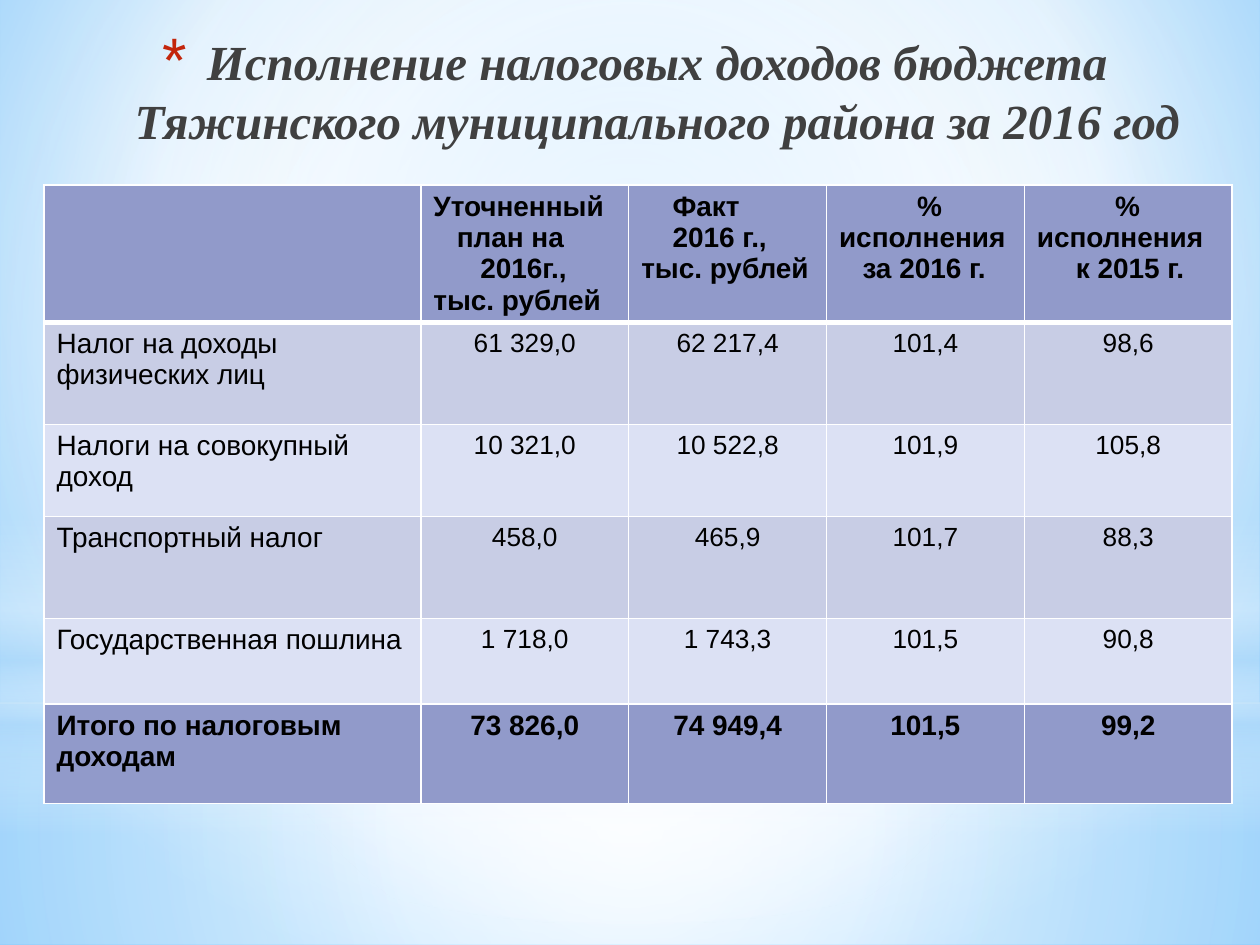
"""Build a slide with a table of district tax revenue for 2016."""
from lxml import etree
from pptx import Presentation, util as u
from pptx.dml.color import RGBColor
from pptx.enum import shapes, text
from pptx.oxml.ns import qn

WIDTH, HEIGHT = 10, 7.5
TITLE = "Исполнение налоговых доходов бюджета Тяжинского муниципального района за 2016 год"
HEADINGS = [
    [],
    [("Уточненный", 0), ("план на", 3), ("2016г., тыс. рублей", 6)],
    [("Факт", 4), ("2016 г., тыс. рублей", 4)],
    [("% исполнения", 10), ("за 2016 г.", 3)],
    [("% исполнения", 10), ("к 2015 г.", 5)],
]
TAXES = [
    ("Налог на доходы физических лиц", "61 329,0", "62 217,4", "101,4", "98,6"),
    ("Налоги на совокупный доход", "10 321,0", "10 522,8", "101,9", "105,8"),
    ("Транспортный налог", "458,0", "465,9", "101,7", "88,3"),
    ("Государственная пошлина", "1 718,0", "1 743,3", "101,5", "90,8"),
    ("Итого по налоговым доходам", "73 826,0", "74 949,4", "101,5", "99,2"),
]
COLUMNS = [2.99, 1.65, 1.57, 1.57, 1.65]
ROWS = [0.87, 0.81, 0.73, 0.81, 0.68, 0.79]
ACCENT, BANDS = "919ACA", ("C8CDE5", "DCE1F4")
INDENT_STEP = 0.062
CENTRE = (50, 50, 50, 50)
SKY = [(0, "9ED5FF", 100), (60, "FFFFFF", 100), (100, "5BB9FF", 100)]
BACKDROP = [
    ("RECTANGLE", 5.58, 1.92, CENTRE,
     [(0, "FFFFFF", 91), (37, "FFFFFF", 76), (100, "B4DCFA", 79)]),
    ("RECTANGLE", 0, 5.58, CENTRE,
     [(0, "FFFFFF", 89), (48, "FFFFFF", 62), (100, "B4DCFA", 79)]),
    ("RECTANGLE", 4.12, 2.5, None,
     [(0, "FFFFFF", 0), (29, "FFFFFF", 30), (45, "B4DCFA", 40),
      (55, "FFFFFF", 26), (65, "B4DCFA", 60), (100, "FFFFFF", 0)]),
    ("OVAL", 1.75, 5.58, CENTRE, [(0, "FFFFFF", 100), (56, "FFFFFF", 0)]),
]


def rgb(value):
    return RGBColor.from_string(value)


def child(parent, tag, **attributes):
    values = {name: str(value) for name, value in attributes.items()}
    return etree.SubElement(parent, qn(f"a:{tag}"), values)


def set_gradient(fill, properties, stops, focus):
    fill.solid()
    solid = properties.find(qn("a:solidFill"))
    gradient = etree.Element(qn("a:gradFill"), rotWithShape="1")
    stop_list = child(gradient, "gsLst")
    for position, colour, opacity in stops:
        stop = child(stop_list, "gs", pos=position * 1000)
        child(child(stop, "srgbClr", val=colour), "alpha", val=opacity * 1000)
    if focus:
        sides = {side: share * 1000 for side, share in zip("ltrb", focus)}
        child(child(gradient, "path", path="circle"), "fillToRect", **sides)
    else:
        child(gradient, "lin", ang=90 * 60000, scaled=0)
    properties.replace(solid, gradient)


def add_backdrop(slide):
    background = slide.background.fill
    set_gradient(background, slide.element.find(".//" + qn("p:bgPr")), SKY, (20, 10, 20, 60))
    for kind, top, height, focus, stops in BACKDROP:
        glow = slide.shapes.add_shape(shapes.MSO_SHAPE[kind], 0, u.Inches(top),
                                      u.Inches(WIDTH), u.Inches(height))
        glow.shadow.inherit = False
        glow.line.fill.background()
        set_gradient(glow.fill, glow.element.spPr, stops, focus)


def add_title(slide):
    title = slide.shapes.title
    slide.shapes.element.append(title.element)
    title.left, title.top, title.width, title.height = map(u.Inches, (0.51, 0.21, 9.06, 1.02))
    frame = title.text_frame
    frame.text = TITLE
    frame.auto_size = text.MSO_AUTO_SIZE.NONE
    frame.vertical_anchor = text.MSO_ANCHOR.MIDDLE
    heading = frame.paragraphs[0]
    heading.alignment = text.PP_ALIGN.CENTER
    set_font(heading, 28, True, "404040", "Times New Roman")
    heading.font.italic = True
    properties = set_indent(heading, 0.35, -0.35)
    bullet = [
        ("buClr", {}), ("buSzPct", {"val": 128000}),
        ("buFont", {"typeface": "Arial"}), ("buChar", {"char": "*"}),
    ]
    for place, (tag, attributes) in enumerate(bullet):
        part = child(properties, tag, **attributes)
        if tag == "buClr":
            child(part, "srgbClr", val="C3260C")
        properties.insert(place, part)


def set_font(paragraph, size, bold, colour="000000", name="Arial"):
    font = paragraph.font
    font.size, font.bold, font.name = u.Pt(size), bold, name
    font.color.rgb = rgb(colour)


def set_indent(paragraph, margin, first_line):
    properties = paragraph._p.get_or_add_pPr()
    properties.set("marL", str(u.Inches(margin)))
    properties.set("indent", str(u.Inches(first_line)))
    return properties


def style_cell(cell, fill, top, bottom):
    cell.fill.solid()
    cell.fill.fore_color.rgb = rgb(fill)
    properties = cell._tc.get_or_add_tcPr()
    for place, (side, width) in enumerate(zip("LRTB", (1, 1, top, bottom))):
        border = child(properties, f"ln{side}", w=u.Pt(width))
        child(child(border, "solidFill"), "srgbClr", val="FFFFFF")
        properties.insert(place, border)


def add_table(slide):
    table = slide.shapes.add_table(
        len(ROWS), len(COLUMNS), u.Inches(0.35), u.Inches(1.47),
        u.Inches(sum(COLUMNS)), u.Inches(sum(ROWS))).table
    for column, width in zip(table.columns, COLUMNS):
        column.width = u.Inches(width)
    for row, height in zip(table.rows, ROWS):
        row.height = u.Inches(height)

    for column, lines in enumerate(HEADINGS):
        cell = table.cell(0, column)
        style_cell(cell, ACCENT, 1, 3)
        cell.text = "\n".join(line for line, _ in lines)
        for paragraph, (_, steps) in zip(cell.text_frame.paragraphs, lines):
            set_font(paragraph, 16, True)
            set_indent(paragraph, 0, steps * INDENT_STEP)

    for row, values in enumerate(TAXES, 1):
        total = row == len(TAXES)
        for column, value in enumerate(values):
            cell = table.cell(row, column)
            style_cell(cell, ACCENT if total else BANDS[(row - 1) % 2], 3 if row == 1 else 1, 1)
            cell.text = value
            paragraph = cell.text_frame.paragraphs[0]
            set_font(paragraph, 15 if column and not total else 16, total)
            if column:
                paragraph.alignment = text.PP_ALIGN.CENTER


def main():
    deck = Presentation()
    deck.slide_width, deck.slide_height = u.Inches(WIDTH), u.Inches(HEIGHT)
    slide = deck.slides.add_slide(deck.slide_layouts[5])
    add_backdrop(slide)
    add_title(slide)
    add_table(slide)
    deck.save("out.pptx")


if __name__ == "__main__":
    main()
